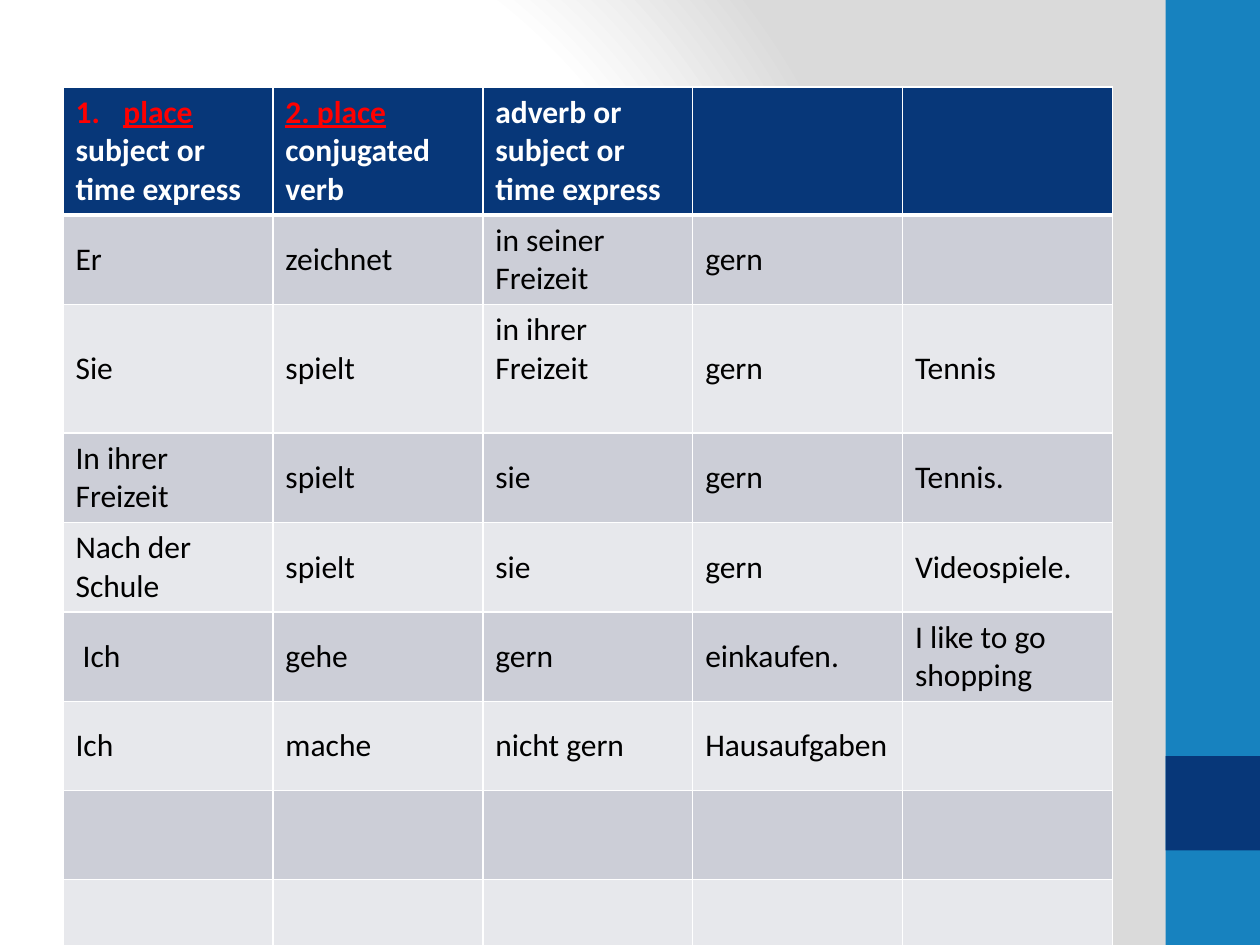
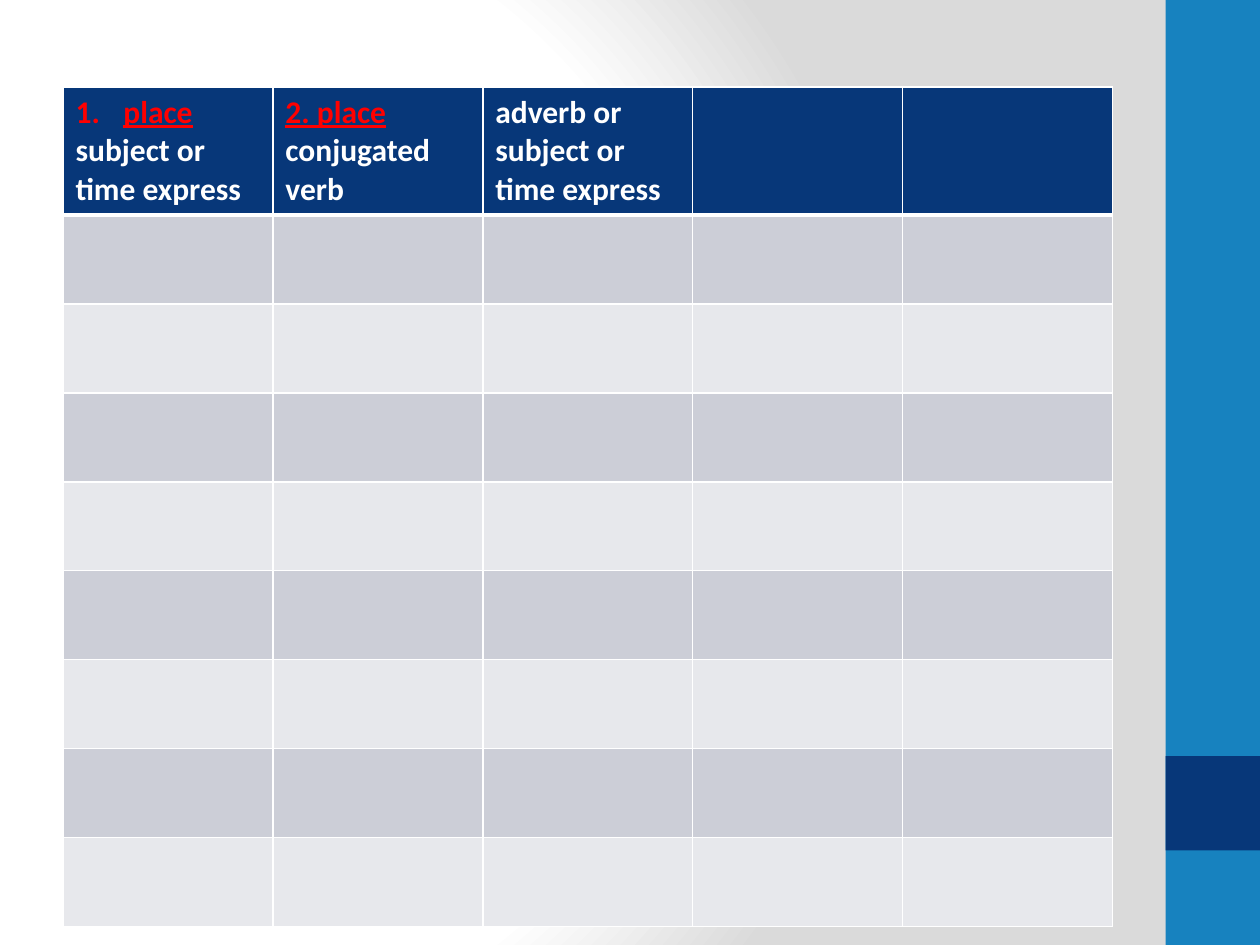
from lxml.etree import SubElement, fromstring
from pptx import Presentation
from pptx.dml.color import RGBColor
from pptx.enum.shapes import MSO_SHAPE
from pptx.enum.text import MSO_ANCHOR
from pptx.oxml.ns import nsdecls, qn
from pptx.util import Inches, Pt

HEAD = [
    ["place", "subject or", "time express"],
    ["2. place", "conjugated verb"],
    ["adverb or", "subject or", "time express"],
    [],
    [],
]
WORDS = [
    ["Er", "zeichnet", "in seiner Freizeit", "gern", ""],
    ["Sie", "spielt", "in ihrer Freizeit", "gern", "Tennis"],
    ["In ihrer Freizeit", "spielt", "sie", "gern", "Tennis."],
    ["Nach der Schule", "spielt", "sie", "gern", "Videospiele."],
    [" Ich", "gehe", "gern", "einkaufen.", "I like to go shopping"],
    ["Ich", "mache", "nicht gern", "Hausaufgaben", ""],
]
ROWS = 8
TALL = 2
SLIDES = [(WORDS, {TALL: Inches(1.02)}), ([], {})]

NAVY = RGBColor(0x07, 0x37, 0x79)
BLUE = RGBColor(0x17, 0x82, 0xBF)
RED = RGBColor(0xFF, 0, 0)
WHITE = RGBColor(0xFF, 0xFF, 0xFF)
BLACK = RGBColor(0, 0, 0)
BANDS = [RGBColor(0xE7, 0xE8, 0xEC), RGBColor(0xCC, 0xCE, 0xD7)]
FONT = "Calibri"

LEFT, TOP, WIDTH = Inches(0.5), Inches(0.69), Inches(8.33)
HIGH = Inches(1.01)
STEP = Inches(5.65) // ROWS
BARS = [(0, 7.5, BLUE), (6, 0.75, NAVY)]

GLOW = f"""<a:gradFill {nsdecls('a')} rotWithShape="1"><a:gsLst>
<a:gs pos="0"><a:srgbClr val="{WHITE}"/></a:gs>
<a:gs pos="75000"><a:srgbClr val="{WHITE}"/></a:gs>
<a:gs pos="100000"><a:srgbClr val="DADADA"/></a:gs></a:gsLst>
<a:path path="circle"><a:fillToRect l="20000" t="50000" r="100000" b="50000"/></a:path>
</a:gradFill>"""


def write(cell, lines, color=BLACK, bold=False, first=None, number=False):
    frame = cell.text_frame
    for i, text in enumerate(lines):
        para = frame.paragraphs[0] if i == 0 else frame.add_paragraph()
        run = para.add_run()
        run.text = text
        font = run.font
        font.name, font.size, font.bold = FONT, Pt(18), bold
        lead = first is not None and i == 0
        font.color.rgb = first if lead else color
        font.underline = lead
        if lead and number:
            props = para._p.get_or_add_pPr()
            props.set("marL", str(Inches(0.38)))
            props.set("indent", str(-Inches(0.38)))
            SubElement(props, qn("a:buAutoNum"), type="arabicPeriod")


def paint(cell, color, top=1, low=1):
    cell.fill.solid()
    cell.fill.fore_color.rgb = color
    props = cell._tc.get_or_add_tcPr()
    edges = {"L": 1, "R": 1, "T": top, "B": low}
    for i, (side, width) in enumerate(edges.items()):
        line = fromstring(
            f'<a:ln{side} {nsdecls("a")} w="{Pt(width)}"><a:solidFill>'
            f'<a:srgbClr val="{WHITE}"/></a:solidFill></a:ln{side}>')
        props.insert(i, line)


def dress(master, slide):
    fill = master.background.fill
    fill.solid()
    solid = next(master.element.iter(qn("p:bgPr"))).find(qn("a:solidFill"))
    solid.getparent().replace(solid, fromstring(GLOW))
    for i, (top, high, color) in enumerate(BARS):
        bar = slide.shapes.add_shape(
            MSO_SHAPE.RECTANGLE, Inches(9.25), Inches(top), Inches(0.75), Inches(high))
        bar.shadow.inherit = False
        bar.fill.solid()
        bar.fill.fore_color.rgb = color
        bar.line.fill.background()
        next(bar.element.iter(qn("p:cNvPr"))).set("id", str(101 + i))
        master.shapes.element.append(bar.element)


def chart(slide, words, sizes):
    highs = [HIGH] + [sizes.get(r, STEP) for r in range(1, ROWS + 1)]
    grid = slide.shapes.add_table(
        ROWS + 1, len(HEAD), LEFT, TOP, WIDTH, sum(highs)).table
    for col in grid.columns:
        col.width = WIDTH // len(HEAD)
    for row, high in zip(grid.rows, highs):
        row.height = high
    for c, lines in enumerate(HEAD):
        cell = grid.cell(0, c)
        paint(cell, NAVY, low=3)
        write(cell, lines, color=WHITE, bold=True,
              first=RED if c < 2 else None, number=c == 0)
        for r in range(1, ROWS + 1):
            cell = grid.cell(r, c)
            paint(cell, BANDS[r % 2], top=3 if r == 1 else 1)
            text = words[r - 1][c] if r <= len(words) else ""
            if text:
                cell.vertical_anchor = MSO_ANCHOR.MIDDLE
                write(cell, [text])
    if words:
        grid.cell(TALL, 2).vertical_anchor = MSO_ANCHOR.TOP


def main():
    deck = Presentation()
    deck.slide_width, deck.slide_height = Inches(10), Inches(7.5)
    pages = [deck.slides.add_slide(deck.slide_layouts[6]) for _ in SLIDES]
    dress(deck.slide_master, pages[0])
    for page, (words, sizes) in zip(pages, SLIDES):
        chart(page, words, sizes)
    deck.save("out.pptx")


if __name__ == "__main__":
    main()
